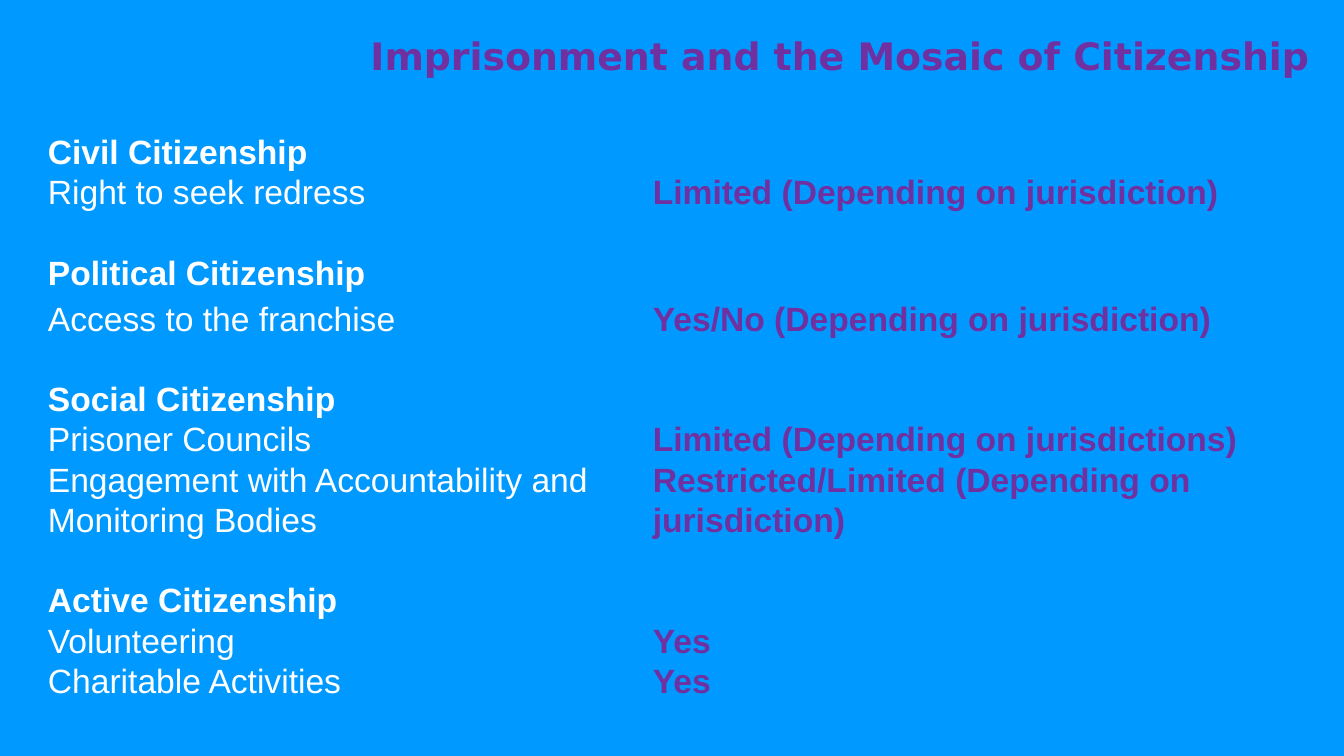
from lxml import etree
from pptx import Presentation
from pptx.dml.color import RGBColor
from pptx.enum.text import MSO_ANCHOR, PP_ALIGN
from pptx.oxml.ns import qn
from pptx.util import Inches, Pt

COLORS = {"background": "0099FF", "accent": "7030A0", "plain": "FFFFFF"}
SPACER = ("", "")
# (right or heading, status of that right in prison)
MOSAIC = [
    SPACER,
    ("Civil Citizenship", ""),
    ("Right to seek redress", "Limited (Depending on jurisdiction)"),
    SPACER,
    ("Political Citizenship", ""),
    ("Access to the franchise", "Yes/No (Depending on jurisdiction)"),
    SPACER,
    ("Social Citizenship", ""),
    ("Prisoner Councils", "Limited (Depending on jurisdictions)"),
    ("Engagement with Accountability and Monitoring Bodies",
     "Restricted/Limited (Depending on jurisdiction)"),
    SPACER,
    ("Active Citizenship", ""),
    ("Volunteering", "Yes"),
    ("Charitable Activities", "Yes"),
]
ROW_HEIGHT = 0.4
SPECIAL_HEIGHTS = {5: 0.46, 6: 0.39, 9: 0.8}
MERGED_ROWS = (0, 10)


def add_run(paragraph, text, font, size, color, bold):
    run = paragraph.add_run()
    run.text = text
    run.font.name = font
    run.font.size = Pt(size)
    run.font.bold = bold
    run.font.color.rgb = RGBColor.from_string(COLORS[color])


def clear_borders(cell):
    properties = cell._tc.get_or_add_tcPr()
    for position, side in enumerate(("a:lnL", "a:lnR", "a:lnT", "a:lnB")):
        border = etree.Element(qn(side), w="0")
        etree.SubElement(border, qn("a:noFill"))
        properties.insert(position, border)


prs = Presentation()
prs.slide_width, prs.slide_height = Inches(13.33), Inches(7.5)
slide = prs.slides.add_slide(prs.slide_layouts[5])
slide.background.fill.solid()
slide.background.fill.fore_color.rgb = RGBColor.from_string(COLORS["background"])

title = slide.shapes.title
title.left, title.top = Inches(3.46), Inches(0.35)
title.width, title.height = Inches(9.87), Inches(0.83)
title.text_frame.vertical_anchor = MSO_ANCHOR.TOP
title.text_frame.word_wrap = True
heading = title.text_frame.paragraphs[0]
heading.alignment = PP_ALIGN.CENTER
heading.line_spacing = 0.83
add_run(heading, "Imprisonment and the Mosaic of Citizenship ",
        "DejaVu Sans", 27, "accent", True)

mosaic = slide.shapes.add_table(len(MOSAIC), 2, Inches(0.4), Inches(0.9),
                                Inches(12.53), Inches(6.05)).table
mosaic.first_row = mosaic.horz_banding = False
mosaic.columns[0].width, mosaic.columns[1].width = Inches(6), Inches(6.53)

for row, (right, status) in enumerate(MOSAIC):
    mosaic.rows[row].height = Inches(SPECIAL_HEIGHTS.get(row, ROW_HEIGHT))
    for column, text in enumerate((right, status)):
        cell = mosaic.cell(row, column)
        cell.fill.background()
        clear_borders(cell)
        cell.margin_left = cell.margin_right = Inches(0.075)
        cell.margin_top = cell.margin_bottom = 0
        cell.vertical_anchor = MSO_ANCHOR.BOTTOM
        if text:
            entry = cell.text_frame.paragraphs[0]
            entry.line_spacing = 1.07
            is_status = column == 1
            add_run(entry, text, "Arial", 24,
                    "accent" if is_status else "plain", is_status or not status)

for row in MERGED_ROWS:
    mosaic.cell(row, 0).merge(mosaic.cell(row, 1))

prs.save("out.pptx")
